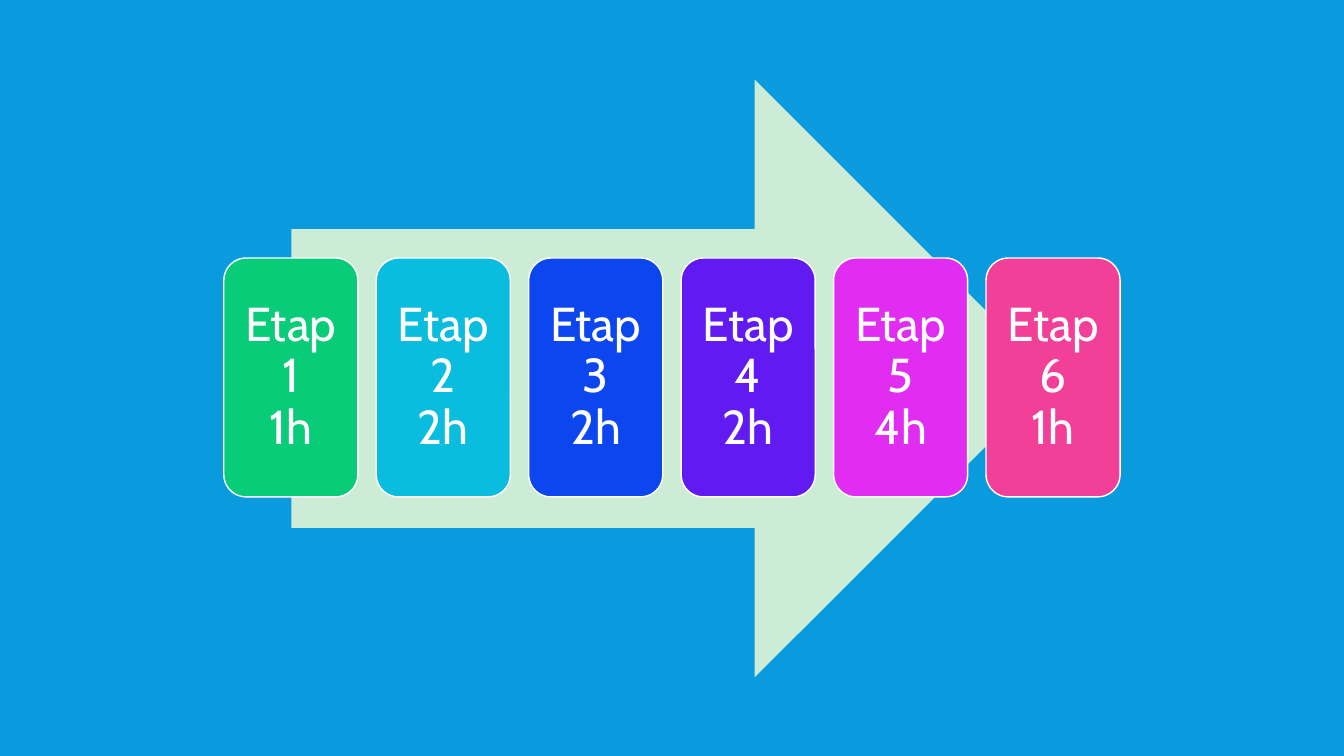
"""Build a slide with six timed stages set along a wide arrow."""
import pptx
import pptx.dml.color
import pptx.enum.shapes
import pptx.enum.text
import pptx.util

Inches = pptx.util.Inches
Kind = pptx.enum.shapes.MSO_SHAPE

THEME = {
    "back": "099BDD",
    "arrow": "CCECD6",
    "white": "FFFFFF",
    "cards": ["08CC78", "0ABCDD", "0C46EE", "611AF2", "E12DF2", "F24099"],
    "font": "Cabin",
    "size": 34,
}


def paint(fill, color):
    fill.solid()
    fill.fore_color.rgb = pptx.dml.color.RGBColor.from_string(color)


def write(text, frame, size=THEME["size"], color=THEME["white"], inset=0.14):
    frame.word_wrap = True
    frame.vertical_anchor = pptx.enum.text.MSO_ANCHOR.MIDDLE
    frame.margin_left = frame.margin_right = Inches(inset)
    frame.margin_top = frame.margin_bottom = Inches(inset)
    para = frame.paragraphs[0]
    para.text = text
    para.alignment = pptx.enum.text.PP_ALIGN.CENTER
    para.line_spacing = 0.9
    for run in para.runs:
        run.font.name = THEME["font"]
        run.font.size = pptx.util.Pt(size)
        paint(run.font.fill, color)


deck = pptx.Presentation()
deck.slide_width, deck.slide_height = Inches(13.33), Inches(7.5)
slide = deck.slides.add_slide(deck.slide_layouts[6])
paint(slide.background.fill, THEME["back"])

group = slide.shapes.add_group_shape()
arrow = group.shapes.add_shape(
    Kind.RIGHT_ARROW, Inches(2.89), Inches(0.79), Inches(7.56), Inches(5.93))
arrow.shadow.inherit = False
paint(arrow.fill, THEME["arrow"])
arrow.line.fill.background()

hours = [1, 2, 2, 2, 4, 1]
left, top, width, height = 2.22, 2.56, 1.33, 2.37
step = (9.78 - left) / (len(hours) - 1)

for i, (time, color) in enumerate(zip(hours, THEME["cards"])):
    card = group.shapes.add_shape(
        Kind.ROUNDED_RECTANGLE, Inches(left + i * step), Inches(top),
        Inches(width), Inches(height))
    card.shadow.inherit = False
    paint(card.fill, color)
    paint(card.line.fill, THEME["white"])
    card.line.width = pptx.util.Pt(1)
    write(f"Etap {i + 1}\n{time}h", card.text_frame)

deck.save("out.pptx")
